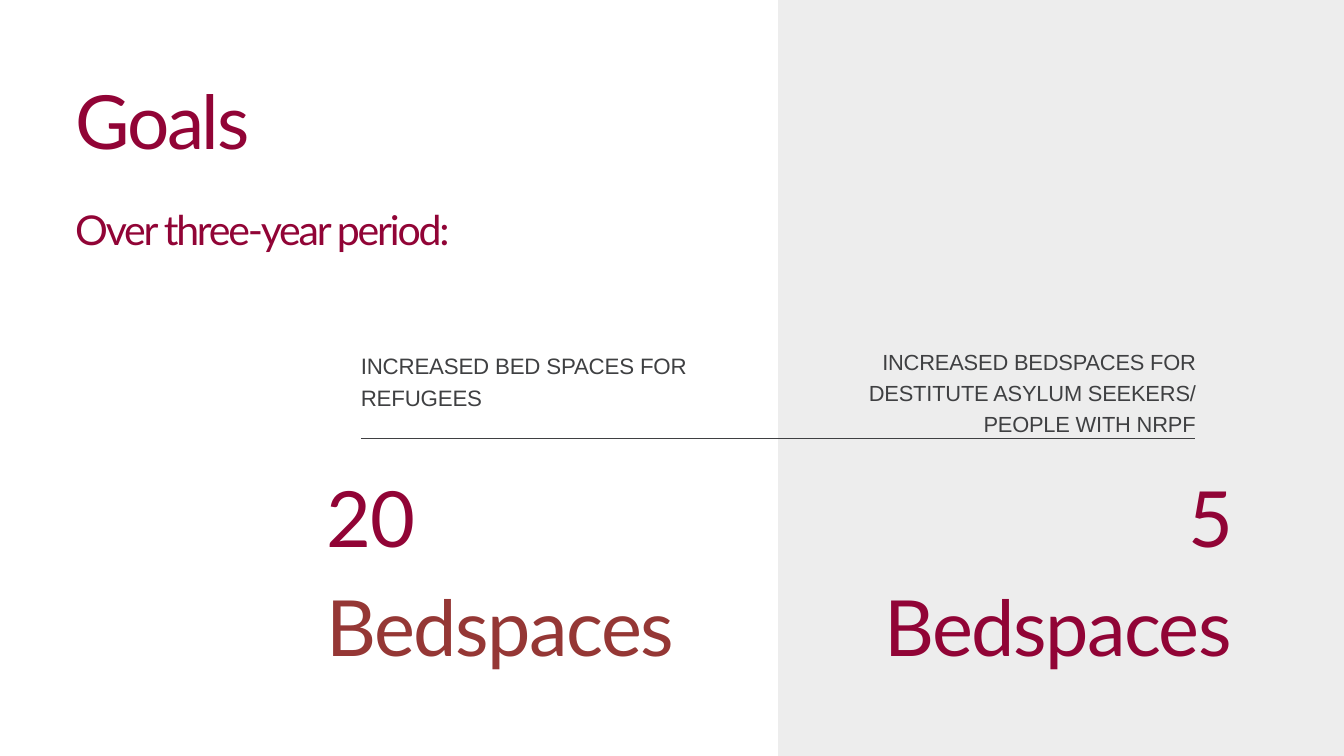
"""Build the goals slide with its two bedspace targets."""
from lxml.etree import SubElement
from pptx import Presentation
from pptx.dml.color import RGBColor
from pptx.enum.shapes import MSO_CONNECTOR as CONNECTOR, MSO_SHAPE as SHAPE
from pptx.enum.text import MSO_ANCHOR as ANCHOR, MSO_AUTO_SIZE as AUTO_SIZE, PP_ALIGN as ALIGN
from pptx.oxml.ns import qn
from pptx.util import Pt

CRIMSON = RGBColor(0x91, 0x04, 0x36)
BRICK = RGBColor(0x95, 0x37, 0x35)
CHARCOAL = RGBColor(0x3F, 0x40, 0x42)
PALE_GREY = RGBColor(0xED, 0xED, 0xED)


def place(shape, left, top, width, height):
    """Set the position and size of a shape in points."""
    shape.left, shape.top = Pt(left), Pt(top)
    shape.width, shape.height = Pt(width), Pt(height)


def add_panel(slide, left, top, width, height):
    """Add a plain grey panel."""
    panel = slide.shapes.add_shape(SHAPE.RECTANGLE, Pt(left), Pt(top), Pt(width), Pt(height))
    panel.shadow.inherit = False
    panel.fill.solid()
    panel.fill.fore_color.rgb = PALE_GREY
    panel.line.fill.background()


def add_divider(slide, left, right, y):
    """Add a thin horizontal line."""
    divider = slide.shapes.add_connector(CONNECTOR.STRAIGHT, Pt(left), Pt(y), Pt(right), Pt(y))
    divider.line.color.rgb = CHARCOAL
    divider.line.width = Pt(0.75)
    SubElement(divider._element.spPr, qn("a:effectLst"))


def prepare_frame(frame):
    """Give a text frame no margins, wrapping and top alignment."""
    frame.margin_left = frame.margin_top = frame.margin_right = frame.margin_bottom = 0
    frame.word_wrap = True
    frame.vertical_anchor = ANCHOR.TOP
    frame.auto_size = AUTO_SIZE.SHAPE_TO_FIT_TEXT


def format_paragraph(paragraph, leading, align=ALIGN.LEFT):
    """Set line spacing and alignment of a paragraph."""
    paragraph.line_spacing = Pt(leading)
    paragraph.alignment = align


def add_run(paragraph, text, size, font, color, tracking):
    """Append a formatted run with letter spacing in points."""
    run = paragraph.add_run()
    run.text = text
    run.font.size = Pt(size)
    run.font.name = font
    run.font.color.rgb = color
    run.font._element.set("spc", str(round(tracking * 100)))


def add_heading(slide):
    """Fill the title placeholder with the heading and its second line."""
    title = slide.shapes.title
    place(title, 80.6, 80, 447, 182)
    frame = title.text_frame
    prepare_frame(frame)
    heading, period = frame.paragraphs[0], frame.add_paragraph()
    for paragraph, text, size in ((heading, "Goals", 80), (period, "Over three-year period:", 44)):
        format_paragraph(paragraph, 96)
        add_run(paragraph, text, size, "Lato", CRIMSON, -2.4)


def add_text(slide, box, leading, align):
    """Add a text box and return its formatted paragraph."""
    frame = slide.shapes.add_textbox(*map(Pt, box)).text_frame
    prepare_frame(frame)
    paragraph = frame.paragraphs[0]
    format_paragraph(paragraph, leading, align)
    return paragraph


def add_target(slide, box, align, parts):
    """Add a large target figure from (text, colour) parts."""
    target = add_text(slide, box, 116.3, align)
    for text, color in parts:
        add_run(target, text, 83, "Lato", color, -1.7)


def add_label(slide, box, align, text, size, leading):
    """Add the caption above a target."""
    label = add_text(slide, box, leading, align)
    add_run(label, text, size, "Arial", CHARCOAL, -0.2)


def main():
    """Build and save the slide."""
    deck = Presentation()
    deck.slide_width, deck.slide_height = Pt(1440), Pt(810)
    slide = deck.slides.add_slide(deck.slide_layouts[5])

    add_panel(slide, 833.8, -16.5, 624.2, 845.3)
    add_divider(slide, 386.6, 1280.9, 469.8)
    add_heading(slide)
    add_target(slide, (350, 487.4, 471.6, 113), ALIGN.LEFT,
               [("20 ", CRIMSON), ("Bedspaces", BRICK)])
    add_target(slide, (882.7, 487.4, 437, 111), ALIGN.RIGHT, [("5 Bedspaces", CRIMSON)])
    add_label(slide, (386.6, 373, 398.2, 66.2), ALIGN.LEFT,
              "INCREASED BED SPACES FOR REFUGEES", 23.9, 33.5)
    add_label(slide, (882.7, 369.4, 398.2, 97.2), ALIGN.RIGHT,
              "INCREASED BEDSPACES FOR DESTITUTE ASYLUM SEEKERS/ PEOPLE WITH NRPF", 23.4, 32.7)
    deck.save("out.pptx")


if __name__ == "__main__":
    main()
